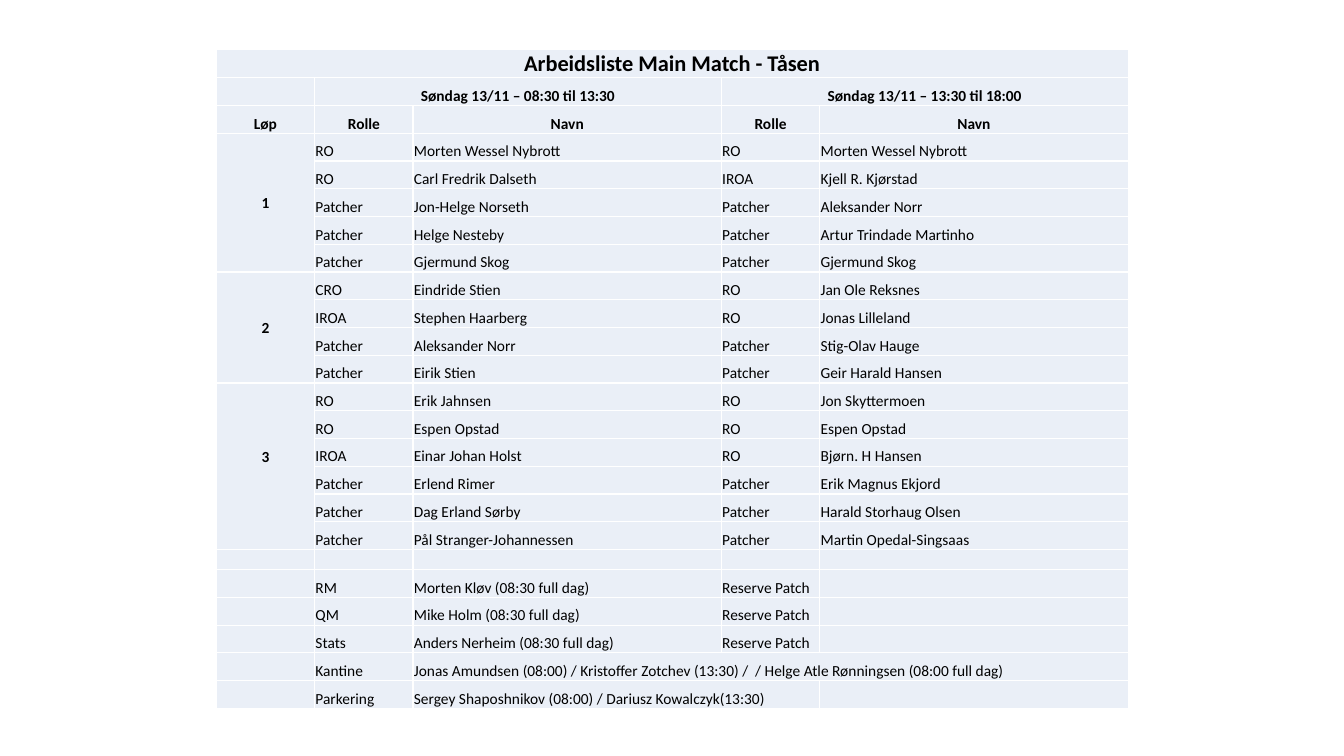
from typing import NamedTuple

import lxml.etree
import pptx
import pptx.dml.color
import pptx.enum.text
import pptx.oxml.ns
import pptx.util
from pptx.util import Cm

FONT = "Calibri"
CELL_FILL = "EAEFF7"
BORDER = "FFFFFF"
BODY_SIZE = 11
ROW_HEIGHT = 0.7
GAP_HEIGHT = 0.51
COLUMN_WIDTHS = (2.48, 2.48, 7.77, 2.48, 7.77)

ALIGN = pptx.enum.text.PP_ALIGN
ANCHOR = pptx.enum.text.MSO_ANCHOR


class Style(NamedTuple):
    size: int = BODY_SIZE
    bold: bool = False
    align: ALIGN = ALIGN.LEFT
    anchor: ANCHOR = ANCHOR.BOTTOM
    margin_bottom: float = 0


class Entry(NamedTuple):
    row: int
    column: int
    text: str
    style: Style
    row_span: int = 1
    column_span: int = 1


class Course(NamedTuple):
    number: str
    style: Style
    staff: list[tuple[str, str, str, str]]


BODY = Style()
HEADING = Style(bold=True, align=ALIGN.CENTER)
TITLE = HEADING._replace(size=16)
COURSE = HEADING._replace(anchor=ANCHOR.MIDDLE)

COURSES = [
    Course("1", COURSE, [
        ("RO", "Morten Wessel Nybrott", "RO", "Morten Wessel Nybrott"),
        ("RO", "Carl Fredrik Dalseth", "IROA", "Kjell R. Kjørstad"),
        ("Patcher", "Jon-Helge Norseth", "Patcher", "Aleksander Norr"),
        ("Patcher", "Helge Nesteby", "Patcher", "Artur Trindade Martinho"),
        ("Patcher", "Gjermund Skog", "Patcher", "Gjermund Skog"),
    ]),
    Course("2", COURSE, [
        ("CRO", "Eindride Stien", "RO", "Jan Ole Reksnes"),
        ("IROA", "Stephen Haarberg", "RO", "Jonas Lilleland"),
        ("Patcher", "Aleksander Norr", "Patcher", "Stig-Olav Hauge"),
        ("Patcher", "Eirik Stien", "Patcher", "Geir Harald Hansen"),
    ]),
    Course("3", COURSE._replace(margin_bottom=0.48), [
        ("RO", "Erik Jahnsen", "RO", "Jon Skyttermoen"),
        ("RO", "Espen Opstad", "RO", "Espen Opstad"),
        ("IROA", "Einar Johan Holst", "RO", "Bjørn. H Hansen"),
        ("Patcher", "Erlend Rimer", "Patcher", "Erik Magnus Ekjord"),
        ("Patcher", "Dag Erland Sørby", "Patcher", "Harald Storhaug Olsen"),
        ("Patcher", "Pål Stranger-Johannessen", "Patcher", "Martin Opedal-Singsaas"),
    ]),
]

SUPPORT = [
    ("RM", "Morten Kløv (08:30 full dag)", "Reserve Patch"),
    ("QM", "Mike Holm (08:30 full dag)", "Reserve Patch"),
    ("Stats", "Anders Nerheim (08:30 full dag)", "Reserve Patch"),
]

SERVICES = [
    ("Kantine", "Jonas Amundsen (08:00) / Kristoffer Zotchev (13:30) /  / "
                "Helge Atle Rønningsen (08:00 full dag)", 3),
    ("Parkering", "Sergey Shaposhnikov (08:00) / Dariusz Kowalczyk(13:30)", 2),
]


def color(value: str) -> pptx.dml.color.RGBColor:
    return pptx.dml.color.RGBColor.from_string(value)


def apply_format(target: object, values: dict[str, object]) -> None:
    for name, value in values.items():
        setattr(target, name, value)


def row_entries(row: int, texts: tuple[str, ...], style: Style, column: int = 1) -> list[Entry]:
    return [Entry(row, column + offset, text, style) for offset, text in enumerate(texts)]


def build_entries() -> tuple[list[Entry], int, int]:
    """Return the filled cells, the index of the gap row and the row count."""
    entries = [
        Entry(0, 0, "Arbeidsliste Main Match - Tåsen", TITLE, column_span=5),
        Entry(1, 1, "Søndag 13/11 – 08:30 til 13:30", HEADING, column_span=2),
        Entry(1, 3, "Søndag 13/11 – 13:30 til 18:00", HEADING, column_span=2),
    ]
    entries += row_entries(2, ("Løp", "Rolle", "Navn", "Rolle", "Navn"), HEADING, 0)
    row = 3
    for course in COURSES:
        entries.append(Entry(row, 0, course.number, course.style, len(course.staff)))
        for texts in course.staff:
            entries += row_entries(row, texts, BODY)
            row += 1
    gap_row = row
    row += 1
    for texts in SUPPORT:
        entries += row_entries(row, texts, BODY)
        row += 1
    for role, names, span in SERVICES:
        entries.append(Entry(row, 1, role, BODY))
        entries.append(Entry(row, 2, names, BODY, column_span=span))
        row += 1
    return entries, gap_row, row


def add_borders(cell: pptx.table._Cell) -> None:
    qn = pptx.oxml.ns.qn
    properties = cell._tc.get_or_add_tcPr()
    for side in ("lnL", "lnR", "lnT", "lnB"):
        line = lxml.etree.SubElement(properties, qn(f"a:{side}"), w=str(pptx.util.Pt(1)))
        fill = lxml.etree.SubElement(line, qn("a:solidFill"))
        lxml.etree.SubElement(fill, qn("a:srgbClr"), val=BORDER)


def prepare_cell(cell: pptx.table._Cell) -> None:
    """Give a cell its borders, fill, margins and the text size it has while empty."""
    add_borders(cell)
    cell.fill.solid()
    cell.fill.fore_color.rgb = color(CELL_FILL)
    apply_format(cell, {
        "margin_left": Cm(0.02), "margin_right": Cm(0.02),
        "margin_top": Cm(0.02), "margin_bottom": Cm(0),
    })
    end_properties = cell.text_frame.paragraphs[0]._p.get_or_add_endParaRPr()
    end_properties.set("sz", str(BODY_SIZE * 100))


def write_entry(table: pptx.table.Table, entry: Entry) -> None:
    cell = table.cell(entry.row, entry.column)
    if entry.row_span > 1 or entry.column_span > 1:
        cell.merge(table.cell(entry.row + entry.row_span - 1,
                              entry.column + entry.column_span - 1))
    style = entry.style
    apply_format(cell, {
        "vertical_anchor": style.anchor, "margin_bottom": Cm(style.margin_bottom),
    })
    paragraph = cell.text_frame.paragraphs[0]
    paragraph.alignment = style.align
    run = paragraph.add_run()
    run.text = entry.text
    apply_format(run.font, {
        "name": FONT, "size": pptx.util.Pt(style.size), "bold": style.bold,
    })
    run.font.color.rgb = color("000000")


def add_work_list(slide: pptx.slide.Slide) -> None:
    entries, gap_row, row_count = build_entries()
    height = ROW_HEIGHT * (row_count - 1) + GAP_HEIGHT
    table = slide.shapes.add_table(
        row_count, len(COLUMN_WIDTHS), Cm(5.45), Cm(1.25),
        Cm(sum(COLUMN_WIDTHS)), Cm(height)).table
    apply_format(table, {"first_row": False, "horz_banding": False})
    for column, width in zip(table.columns, COLUMN_WIDTHS):
        column.width = Cm(width)
    for index, row in enumerate(table.rows):
        row.height = Cm(GAP_HEIGHT if index == gap_row else ROW_HEIGHT)
    for cell in table.iter_cells():
        prepare_cell(cell)
    for entry in entries:
        write_entry(table, entry)


def main() -> None:
    presentation = pptx.Presentation()
    apply_format(presentation, {"slide_width": Cm(33.87), "slide_height": Cm(19.05)})
    slide = presentation.slides.add_slide(presentation.slide_layouts[6])
    add_work_list(slide)
    presentation.save("out.pptx")


if __name__ == "__main__":
    main()
